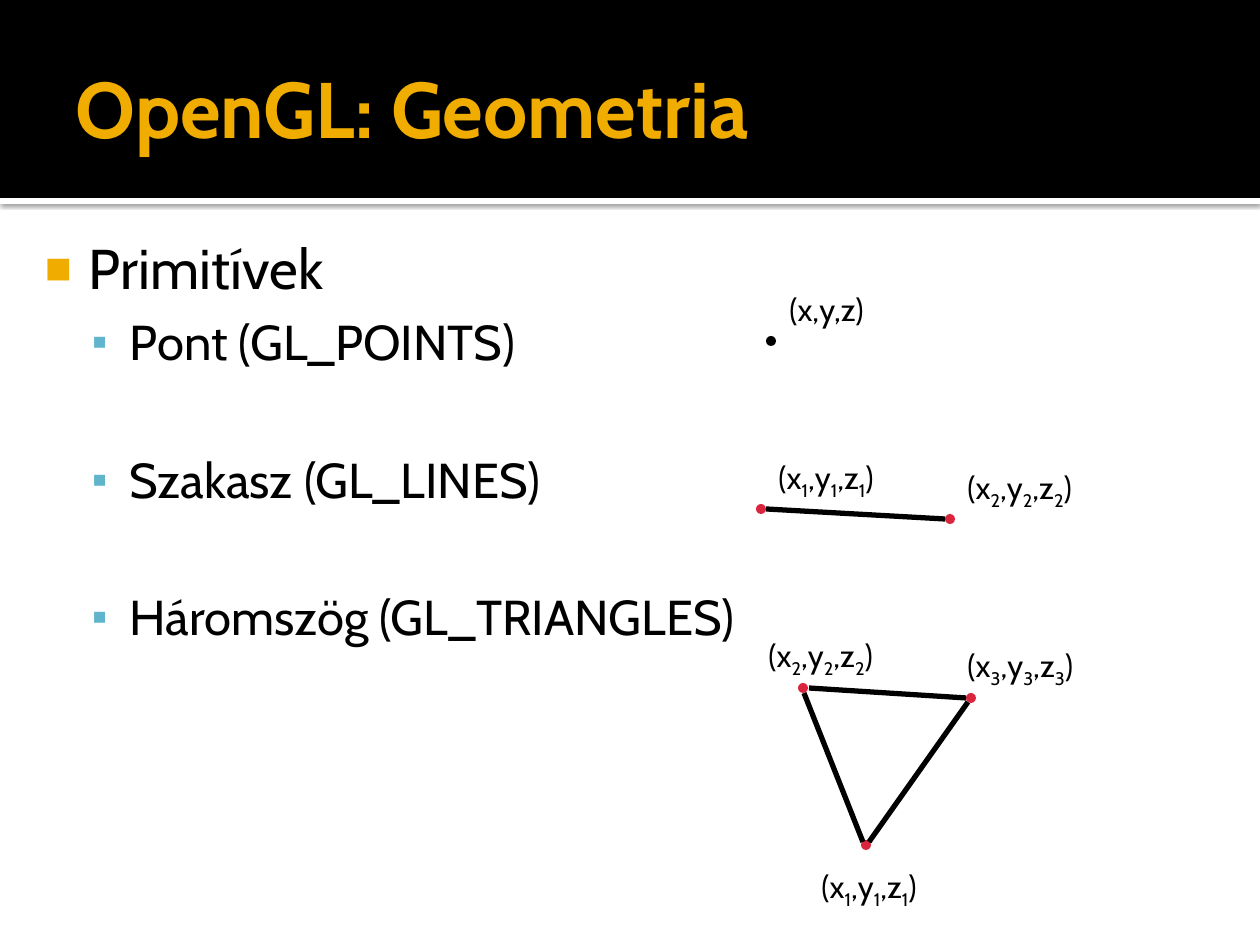
from lxml import etree
from pptx import Presentation
from pptx import util as u
from pptx.dml.color import RGBColor
from pptx.enum import shapes, text
from pptx.oxml import ns

SCALE = 914400 / 126
FONT = "Cabin"
BLACK, WHITE, GOLD, BLUE, RED = "000000", "FFFFFF", "F0AD00", "60B5CC", "D9253E"
DOT = 10


def px(length):
    """Turn pixels into EMU."""
    return u.Emu(round(length * SCALE))


def colour(hex_text):
    """Turn a hex string into a colour."""
    return RGBColor.from_string(hex_text)


def sub(parent, tag, **attributes):
    """Append an XML child with the given attributes."""
    child = etree.SubElement(parent, ns.qn(tag))
    for key, value in attributes.items():
        child.set(key, str(value))
    return child


def add_run(paragraph, words, size, hex_text=BLACK, bold=False, baseline=0):
    """Add one formatted run."""
    run = paragraph.add_run()
    run.text = words
    run.font.name = FONT
    run.font.size = u.Pt(size)
    run.font.bold = bold
    run.font.color.rgb = colour(hex_text)
    if baseline:
        run._r.get_or_add_rPr().set("baseline", str(baseline))


def set_insets(frame, left, top, right, bottom):
    """Set the four text margins."""
    frame.margin_left, frame.margin_top = px(left), px(top)
    frame.margin_right, frame.margin_bottom = px(right), px(bottom)


def add_filled(slide, kind, box, fill):
    """Add a preset shape without outline or shadow."""
    shape = slide.shapes.add_shape(kind, *map(px, box))
    shape.shadow.inherit = False
    shape.fill.solid()
    shape.fill.fore_color.rgb = colour(fill)
    shape.line.fill.background()
    return shape


def add_header(slide):
    """Add the black band and the white stripe that casts a shadow."""
    stripe = add_filled(slide, shapes.MSO_SHAPE.RECTANGLE, (0, 198, 1260, 6), WHITE)
    effects = stripe._element.spPr.find(ns.qn("a:effectLst"))
    shadow = sub(effects, "a:outerShdw", blurRad=u.Pt(2.5), dist=u.Pt(0.8),
                 dir=5400000, algn="t", rotWithShape=0)
    sub(sub(shadow, "a:srgbClr", val=BLACK), "a:alpha", val=60000)
    add_filled(slide, shapes.MSO_SHAPE.RECTANGLE, (0, 0, 1260, 198), BLACK)


def format_title(slide, words):
    """Place and fill the title above the header band."""
    title = slide.shapes.title
    slide.shapes._spTree.append(title._element)
    title.left, title.top, title.width, title.height = map(px, (63, 21, 1134, 173))
    frame = title.text_frame
    frame.word_wrap = True
    frame.vertical_anchor = text.MSO_ANCHOR.MIDDLE
    set_insets(frame, 13, 6, 6, 6)
    heading = frame.paragraphs[0]
    heading.alignment = text.PP_ALIGN.LEFT
    add_run(heading, words, 45, GOLD, bold=True)


def add_bullet(paragraph, mark, hex_text, percent, margin, hang):
    """Give a paragraph a hanging coloured bullet."""
    properties = paragraph._p.get_or_add_pPr()
    properties.set("marL", str(px(margin)))
    properties.set("indent", str(px(-hang)))
    sub(sub(properties, "a:buClr"), "a:srgbClr", val=hex_text)
    sub(properties, "a:buSzPct", val=percent * 1000)
    sub(properties, "a:buFont", typeface="Arial")
    sub(properties, "a:buChar", char=mark)


def add_outline(slide, topic, primitives):
    """Add the topic and its evenly spaced list of primitives."""
    frame = slide.shapes.add_textbox(*map(px, (21, 221, 1239, 638))).text_frame
    frame.word_wrap = True
    set_insets(frame, 8, 13, 13, 6)
    add_run(frame.paragraphs[0], topic, 32)
    add_bullet(frame.paragraphs[0], "■", GOLD, 80, 60, 44)
    for index, primitive in enumerate(primitives):
        item = frame.add_paragraph()
        item.level = 1
        item.space_before = u.Pt(45 if index else 6)
        add_run(item, primitive, 28)
        add_bullet(item, "▪", BLUE, 90, 101, 38)


def add_dot(slide, left, top, fill=RED):
    """Add a vertex dot."""
    add_filled(slide, shapes.MSO_SHAPE.OVAL, (left, top, DOT, DOT), fill)


def add_edge(slide, *ends):
    """Add a straight black edge between two points."""
    edge = slide.shapes.add_connector(shapes.MSO_CONNECTOR.STRAIGHT, *map(px, ends))
    edge.line.color.rgb = colour(BLACK)
    edge.line.width = u.Pt(3)
    sub(edge._element.spPr, "a:effectLst")


def add_label(slide, left, top, width, index=""):
    """Add a coordinate triple with an optional subscript index."""
    frame = slide.shapes.add_textbox(*map(px, (left, top, width, 50))).text_frame
    frame.word_wrap = True
    frame.auto_size = text.MSO_AUTO_SIZE.SHAPE_TO_FIT_TEXT
    triple = frame.paragraphs[0]
    if not index:
        add_run(triple, "(x,y,z)", 18)
        return
    for part in ("(x", ",y", ",z"):
        add_run(triple, part, 18)
        add_run(triple, index, 18, baseline=-25000)
    add_run(triple, ")", 18)


def main():
    """Build and save the slide."""
    deck = Presentation()
    deck.slide_width, deck.slide_height = px(1260), px(945)
    slide = deck.slides.add_slide(deck.slide_layouts[5])
    add_header(slide)
    format_title(slide, "OpenGL: Geometria")
    add_outline(slide, "Primitívek", ["Pont (GL_POINTS)", "Szakasz (GL_LINES)",
                                      "Háromszög (GL_TRIANGLES)"])

    add_dot(slide, 766, 336, BLACK)
    add_label(slide, 777, 284, 136)

    vertices = [(756, 504), (945, 514), (798, 683), (966, 693), (861, 840)]
    for vertex in vertices:
        add_dot(slide, *vertex)
    edges = [(766, 509, 945, 519), (809, 688, 966, 698),
             (968, 702, 869, 842), (804, 693, 863, 842)]
    for edge in edges:
        add_edge(slide, *edge)
    labels = [(766, 452, 158, "1"), (955, 462, 179, "2"), (809, 861, 158, "1"),
              (756, 630, 158, "2"), (955, 640, 158, "3")]
    for label in labels:
        add_label(slide, *label)
    deck.save("out.pptx")


if __name__ == "__main__":
    main()
